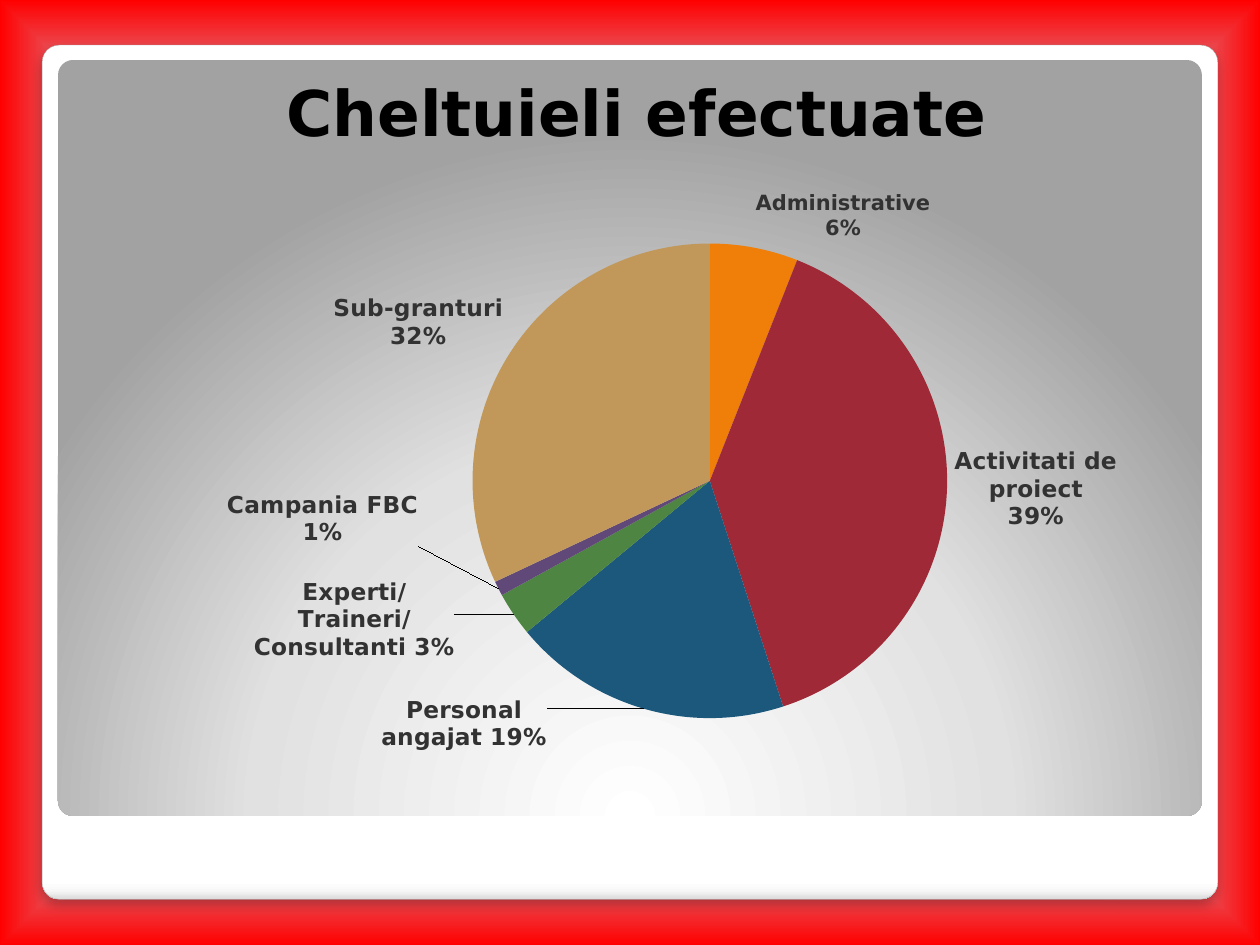
"""Build the slide with the pie chart of expenses."""
from lxml import etree
from pptx import Presentation
from pptx import util as u
from pptx.chart.data import CategoryChartData
from pptx.dml.color import RGBColor
from pptx.enum import chart as charts, shapes, text
from pptx.oxml import parse_xml
from pptx.oxml.ns import nsdecls, qn

FONT = "DejaVu Sans"
EXPENSES = [
    ("Administrative", "Administrative\n6%", 6, "F07F09", 12, None),
    ("Activiteti de proiect", "Activitati de proiect\n39%", 39, "9F2936", 13.3, None),
    ("Personal angajat", "Personal angajat 19%", 19, "1B587C", 13.3, (-0.09, -0.03)),
    ("Experti/Traineri/Consultanti", "Experti/Traineri/Consultanti 3%", 3, "4E8542", 13.3, (-0.05, -0.06)),
    ("Campania FBC", "Campania FBC 1%", 1, "604878", 13.3, (-0.07, -0.15)),
    ("Sub-granturi", "Sub-granturi 32%", 32, "C19859", 13.3, None),
]


def color(value):
    """Return the colour for a hex string."""
    return RGBColor.from_string(value)


def style_font(font, size, value, bold=True):
    """Set typeface, size, colour and weight of a font."""
    font.name, font.size, font.bold = FONT, u.Pt(size), bold
    font.color.rgb = color(value)


def set_gradient(fill, parent, stops, direction):
    """Give the parent element a gradient of (percent, colour) stops."""
    fill.solid()
    stop_list = "".join(
        f'<a:gs pos="{percent * 1000}"><a:srgbClr val="{value}"/></a:gs>'
        for percent, value in stops
    )
    gradient = parse_xml(
        f'<a:gradFill {nsdecls("a")} rotWithShape="1">'
        f"<a:gsLst>{stop_list}</a:gsLst>{direction}</a:gradFill>"
    )
    parent.replace(parent.find(qn("a:solidFill")), gradient)


def path_direction(kind, left, top, right, bottom):
    """Return the XML of a path gradient with its focus in percent."""
    return (
        f'<a:path path="{kind}"><a:fillToRect l="{left * 1000}" t="{top * 1000}" '
        f'r="{right * 1000}" b="{bottom * 1000}"/></a:path>'
    )


def paint_background(slide):
    """Paint the red frame behind the panels."""
    fill = slide.background.fill
    fill.solid()
    set_gradient(
        fill,
        slide.element.find(".//" + qn("p:bgPr")),
        [(40, "85C2FF"), (70, "C4D6EB"), (100, "FF0000")],
        path_direction("shape", 50, 50, 50, 50),
    )


def add_panel(slide, box, stops, direction):
    """Add a rounded panel with a gradient and no outline."""
    shape = slide.shapes.add_shape(shapes.MSO_SHAPE.ROUNDED_RECTANGLE, *map(u.Cm, box))
    shape.adjustments[0] = 0.02
    shape.shadow.inherit = False
    shape.line.fill.background()
    set_gradient(shape.fill, shape.element.spPr, stops, direction)
    return shape


def add_frame(slide, box):
    """Add the white panel with its shadow and the grey panel inside it."""
    left, top, width, height = box
    outer = add_panel(
        slide,
        box,
        [(0, "FFFFFF"), (98, "FFFFFF"), (99, "F7F7F7"), (100, "DADADA")],
        '<a:lin ang="5400000" scaled="0"/>',
    )
    outer.line.color.rgb = color("A4A4A4")
    outer.line.width = u.Pt(0.16)
    outer.element.spPr.find(qn("a:effectLst")).append(parse_xml(
        f'<a:outerShdw {nsdecls("a")} blurRad="{u.Pt(6)}" dist="{u.Pt(4)}" dir="5400000" '
        'rotWithShape="0"><a:srgbClr val="000000"><a:alpha val="25000"/></a:srgbClr></a:outerShdw>'
    ))
    add_panel(
        slide,
        (left + 0.32, top + 0.3, width - 0.64, height - 1.98),
        [(0, "FFFFFF"), (55, "E1E1E1"), (100, "A2A2A2")],
        path_direction("circle", 50, 175, 50, -75),
    )


def add_title(slide, box, words):
    """Add the centred title."""
    frame = slide.shapes.add_textbox(*map(u.Cm, box)).text_frame
    frame.word_wrap = True
    frame.vertical_anchor = text.MSO_ANCHOR.MIDDLE
    frame.margin_bottom = u.Cm(0.3)
    paragraph = frame.paragraphs[0]
    paragraph.alignment = text.PP_ALIGN.CENTER
    run = paragraph.add_run()
    run.text = words
    style_font(run.font, 36, "000000")


def manual_layout(**values):
    """Return a chart layout element with the given settings."""
    layout = etree.Element(qn("c:layout"))
    manual = etree.SubElement(layout, qn("c:manualLayout"))
    for name, value in values.items():
        etree.SubElement(manual, qn(f"c:{name}")).set("val", str(value))
    return layout


def label_slice(point, words, size, offset):
    """Write the label of one slice and shift it by its offset."""
    label = point.data_label
    frame = label.text_frame
    for index, line in enumerate(words.split("\n")):
        paragraph = frame.add_paragraph() if index else frame.paragraphs[0]
        run = paragraph.add_run()
        run.text = line
        style_font(run.font, size, "323232")
    label.position = charts.XL_LABEL_POSITION.OUTSIDE_END
    if offset:
        element = frame._txBody.getparent().getparent()
        element.insert(1, manual_layout(x=offset[0], y=offset[1]))


def add_expense_pie(slide, box):
    """Add the pie chart with one labelled slice for each expense."""
    data = CategoryChartData()
    data.categories = [expense[0] for expense in EXPENSES]
    data.add_series("Series 1", [expense[2] for expense in EXPENSES])
    chart = slide.shapes.add_chart(charts.XL_CHART_TYPE.PIE, *map(u.Cm, box), data).chart
    chart.has_legend = chart.has_title = False
    style_font(chart.font, 10, "000000", False)

    plot_area = chart.element.find(".//" + qn("c:plotArea"))
    for layout in plot_area.findall(qn("c:layout")):
        plot_area.remove(layout)
    plot_area.insert(0, manual_layout(
        layoutTarget="inner", xMode="edge", yMode="edge", x=0.33, y=0.187, w=0.452, h=0.744
    ))

    plot = chart.plots[0]
    plot.vary_by_categories = True
    series = plot.series[0]
    labels = series.data_labels
    labels.show_value = False
    labels.show_percentage = labels.show_category_name = True
    labels.position = charts.XL_LABEL_POSITION.OUTSIDE_END
    style_font(labels.font, 13.3, "323232")
    for index, (_, words, _, value, size, offset) in enumerate(EXPENSES):
        point = series.points[index]
        point.format.fill.solid()
        point.format.fill.fore_color.rgb = color(value)
        point.format.line.fill.background()
        label_slice(point, words, size, offset)


def main():
    """Build and save the presentation."""
    presentation = Presentation()
    presentation.slide_width, presentation.slide_height = u.Cm(25.4), u.Cm(19.05)
    slide = presentation.slides.add_slide(presentation.slide_layouts[6])
    paint_background(slide)
    add_frame(slide, (0.85, 0.91, 23.7, 17.22))
    add_title(slide, (1.47, 1.27, 22.73, 2.12), "Cheltuieli efectuate")
    add_expense_pie(slide, (2.54, 2.12, 21.17, 13.55))
    presentation.save("out.pptx")


if __name__ == "__main__":
    main()
